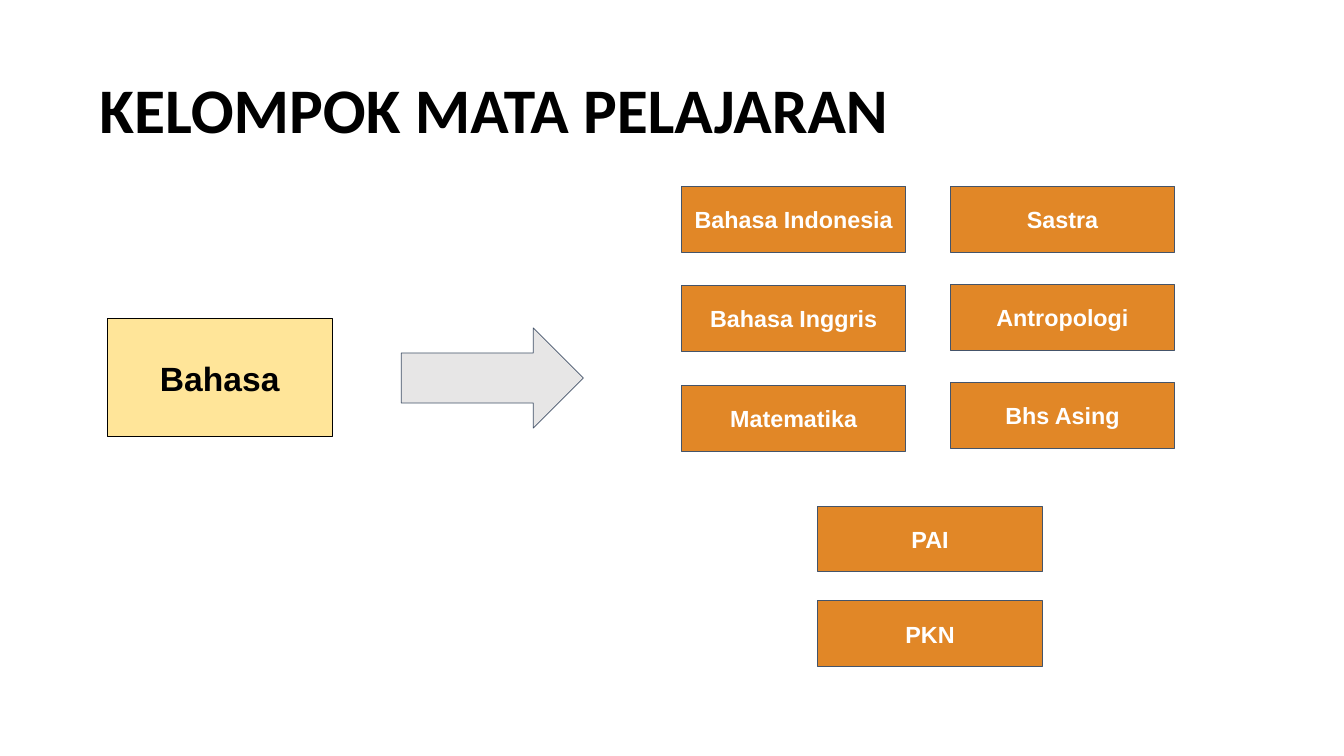
from pptx import Presentation
from pptx.dml.color import RGBColor
from pptx.enum.shapes import MSO_SHAPE as Shape
from pptx.enum.text import MSO_ANCHOR as Anchor, MSO_AUTO_SIZE as AutoSize, PP_ALIGN as Align
from pptx.util import Emu, Pt

PX = 9144  # EMU per px, 100 px to the inch
TITLE_ONLY = 5
COLORS = {
    "black": "000000",
    "white": "FFFFFF",
    "orange": "E18727",
    "yellow": "FFE599",
    "grey": "E7E6E6",
    "slate": "44546A",
}
SUBJECT_WIDTH, SUBJECT_HEIGHT = 334, 98
# left, top, vertical step, subjects
SUBJECT_COLUMNS = [
    (1014, 277, 148, ["Bahasa Indonesia", "Bahasa Inggris", "Matematika"]),
    (1414, 277, 146, ["Sastra", "Antropologi", "Bhs Asing"]),
    (1217, 753, 141, ["PAI", "PKN"]),
]


def px(*lengths):
    return [Emu(length * PX) for length in lengths]


def color(name):
    return RGBColor.from_string(COLORS[name])


class SlideBuilder:
    def __init__(self, page):
        self.page = page

    def set_text(self, item, text, size, font, ink, align, pad):
        frame = item.text_frame
        frame.text = text
        frame.word_wrap = True
        frame.auto_size = AutoSize.NONE
        frame.vertical_anchor = Anchor.MIDDLE
        frame.margin_left, frame.margin_right = px(10, 10)
        frame.margin_top, frame.margin_bottom = px(pad, pad)
        para = frame.paragraphs[0]
        para.alignment = align
        para.font.name = font
        para.font.size = Pt(size)
        para.font.bold = True
        para.font.color.rgb = color(ink)
        return para

    def title(self, text, left, top, width, height):
        title = self.page.shapes.title
        title.left, title.top, title.width, title.height = px(left, top, width, height)
        para = self.set_text(title, text, 68, "Calibri", "black", Align.LEFT, pad=5)
        para.line_spacing = 0.9

    def shape(self, kind, left, top, width, height, fill, line="slate"):
        shape = self.page.shapes.add_shape(kind, *px(left, top, width, height))
        shape.shadow.inherit = False
        shape.fill.solid()
        shape.fill.fore_color.rgb = color(fill)
        shape.line.color.rgb = color(line)
        shape.line.width = Pt(0.75)
        return shape

    def subject(self, text, left, top):
        box = self.shape(Shape.RECTANGLE, left, top, SUBJECT_WIDTH, SUBJECT_HEIGHT, "orange")
        self.set_text(box, text, 25, "Arial", "white", Align.CENTER, pad=10)

    def group(self, text, left, top, width, height):
        box = self.shape(Shape.RECTANGLE, left, top, width, height, "yellow", "black")
        self.set_text(box, text, 36, "Arial", "black", Align.CENTER, pad=10)

    def arrow(self, left, top, width, height):
        self.shape(Shape.RIGHT_ARROW, left, top, width, height, "grey")


def main():
    deck = Presentation()
    deck.slide_width, deck.slide_height = px(2000, 1125)
    slide = SlideBuilder(deck.slides.add_slide(deck.slide_layouts[TITLE_ONLY]))

    slide.title("KELOMPOK MATA PELAJARAN", 138, 60, 1725, 217)
    slide.group("Bahasa", 160, 474, 334, 176)
    slide.arrow(597, 488, 271, 149)
    for left, top, step, subjects in SUBJECT_COLUMNS:
        for row, subject in enumerate(subjects):
            slide.subject(subject, left, top + row * step)

    deck.save("out.pptx")


if __name__ == "__main__":
    main()
